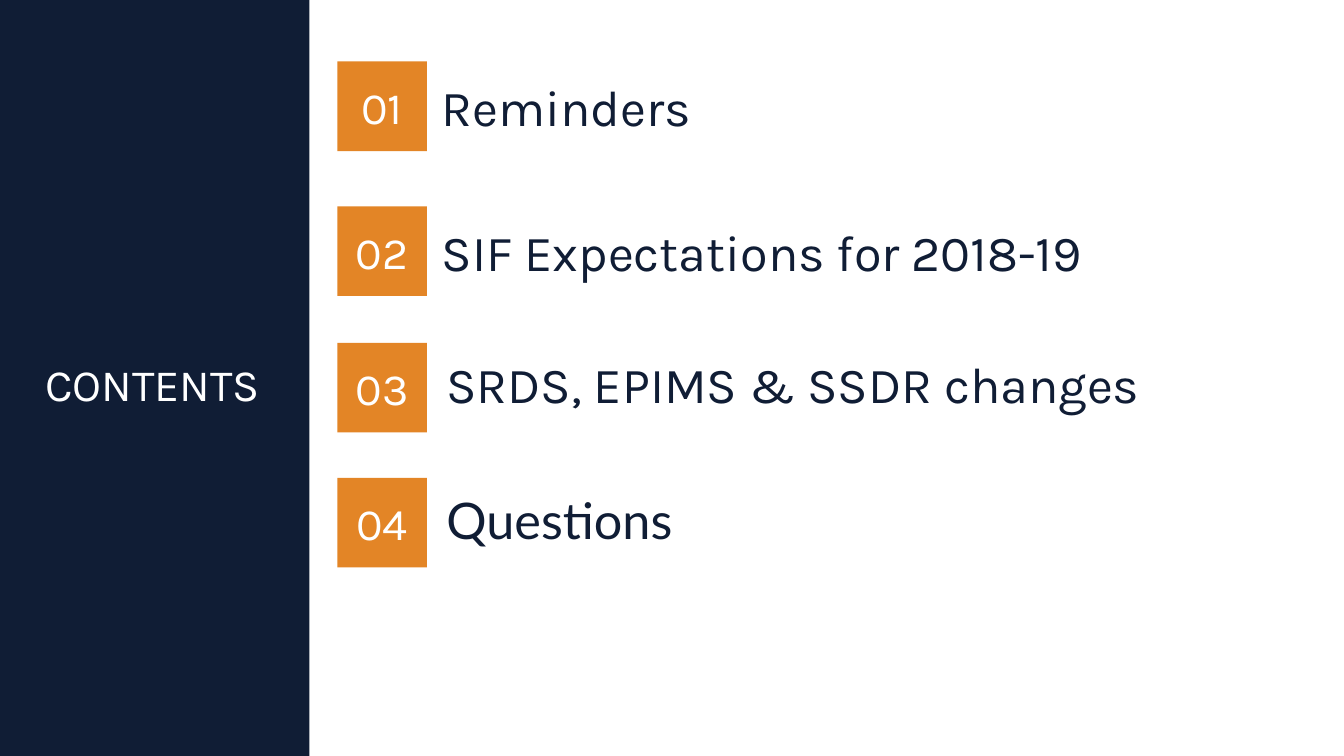
from dataclasses import dataclass

from pptx import Presentation
from pptx import util as u
from pptx.dml.color import RGBColor
from pptx.enum import shapes, text
from pptx.shapes.autoshape import Shape
from pptx.slide import Slide

NAVY = RGBColor(0x10, 0x1D, 0x35)
ORANGE = RGBColor(0xE3, 0x85, 0x26)
WHITE = RGBColor(0xFF, 0xFF, 0xFF)

SLIDE_WIDTH, SLIDE_HEIGHT = 33.87, 19.05
BADGE_LEFT, BADGE_SIZE = 8.5, 2.26


@dataclass(frozen=True)
class Box:
    """A rectangle in centimetres."""
    left: float
    top: float
    width: float
    height: float

    def lengths(self) -> list[u.Length]:
        return [u.Cm(v) for v in (self.left, self.top, self.width, self.height)]


@dataclass(frozen=True)
class AgendaItem:
    title: str
    badge_top: float
    label: Box
    font: str = "Karla"


AGENDA = [
    AgendaItem("Reminders", 1.55, Box(10.88, 1.55, 22.17, BADGE_SIZE)),
    AgendaItem("SIF Expectations for 2018-19", 5.2,
               Box(10.88, 5.2, 22.17, BADGE_SIZE)),
    AgendaItem("SRDS, EPIMS & SSDR changes", 8.64, Box(11, 8.76, 20.02, 1.8)),
    AgendaItem("Questions", 12.04, Box(11, 12.2, 21.36, 1.8), "Lato"),
]


def add_rectangle(s: Slide, box: Box, color: RGBColor) -> Shape:
    sp = s.shapes.add_shape(shapes.MSO_SHAPE.RECTANGLE, *box.lengths())
    sp.shadow.inherit = False
    sp.fill.solid()
    sp.fill.fore_color.rgb = color
    sp.line.fill.background()
    return sp


def write(sp: Shape, words: str, size: int, color: RGBColor,
          align: text.PP_ALIGN, font: str = "Karla") -> None:
    """Put one vertically centred line of text in a shape."""
    tf = sp.text_frame
    tf.text = words
    tf.word_wrap = True
    tf.vertical_anchor = text.MSO_ANCHOR.MIDDLE
    p = tf.paragraphs[0]
    p.alignment = align
    r = p.runs[0]
    r.font.name = font
    r.font.size = u.Pt(size)
    r.font.color.rgb = color


def add_agenda_item(s: Slide, number: int, item: AgendaItem) -> None:
    badge = add_rectangle(
        s, Box(BADGE_LEFT, item.badge_top, BADGE_SIZE, BADGE_SIZE), ORANGE)
    write(badge, f"{number:02}", 32, WHITE, text.PP_ALIGN.CENTER)
    label = s.shapes.add_textbox(*item.label.lengths())
    write(label, item.title, 36, NAVY, text.PP_ALIGN.LEFT, item.font)


def main() -> None:
    prs = Presentation()
    prs.slide_width, prs.slide_height = u.Cm(SLIDE_WIDTH), u.Cm(SLIDE_HEIGHT)
    s = prs.slides.add_slide(prs.slide_layouts[6])

    add_rectangle(s, Box(0, 0, 7.8, SLIDE_HEIGHT), NAVY)
    heading = s.shapes.add_textbox(*Box(0, 8.86, 7.7, 1.63).lengths())
    write(heading, "CONTENTS", 32, WHITE, text.PP_ALIGN.CENTER)

    for number, item in enumerate(AGENDA, start=1):
        add_agenda_item(s, number, item)

    prs.save("out.pptx")


if __name__ == "__main__":
    main()
